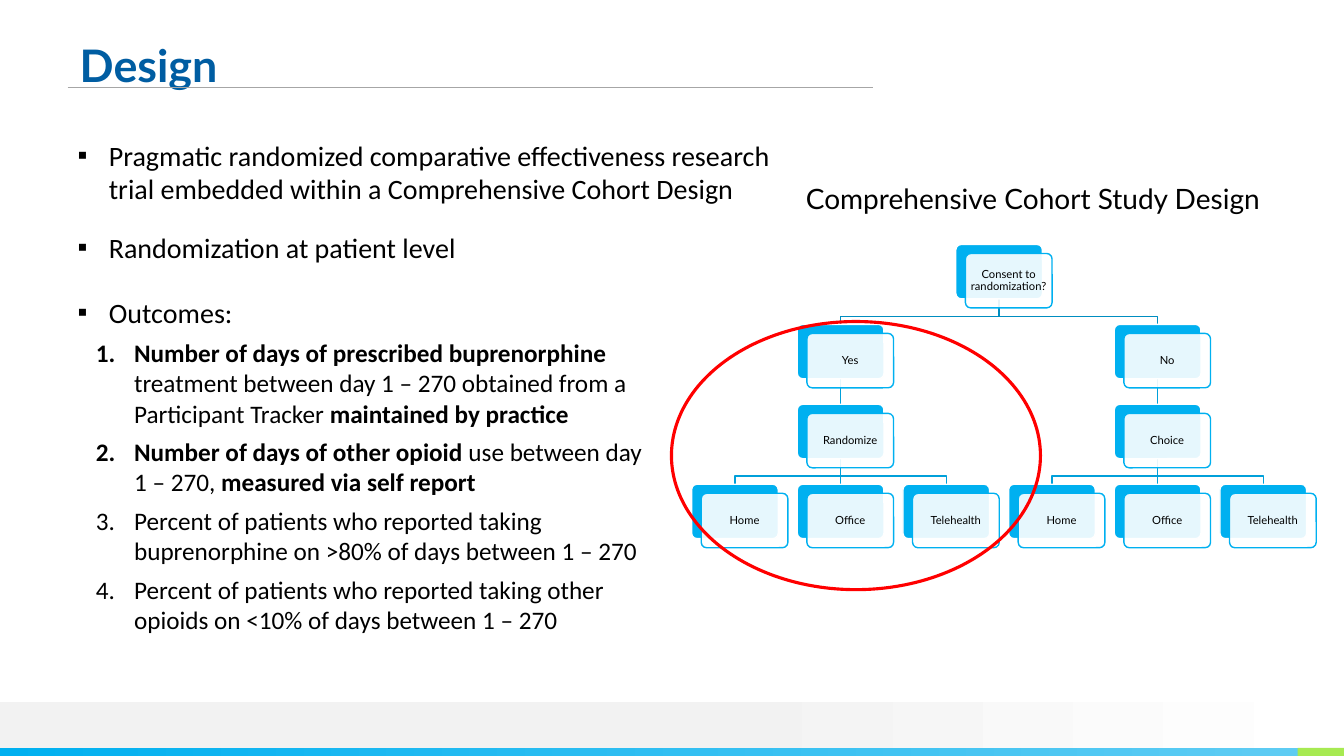
"""Builds the Design slide with its outcome list and cohort study tree."""
from dataclasses import dataclass

from lxml.etree import SubElement
from pptx import Presentation
from pptx.dml.color import RGBColor
from pptx.enum.shapes import MSO_CONNECTOR as Line, MSO_SHAPE as Shape
from pptx.enum.text import MSO_ANCHOR as Anchor, MSO_AUTO_SIZE as AutoSize, PP_ALIGN as Align
from pptx.oxml.ns import qn
from pptx.util import Inches, Pt


@dataclass(frozen=True)
class Theme:
    black: RGBColor = RGBColor.from_string("000000")
    white: RGBColor = RGBColor.from_string("FFFFFF")
    navy: RGBColor = RGBColor.from_string("005DA2")
    sky: RGBColor = RGBColor.from_string("00B0F0")
    pale_sky: RGBColor = RGBColor.from_string("5ECCF3")
    root_link: RGBColor = RGBColor.from_string("008DC0")
    link: RGBColor = RGBColor.from_string("00A0DA")
    red: RGBColor = RGBColor.from_string("FF0000")
    green: RGBColor = RGBColor.from_string("A7EA52")
    mist: RGBColor = RGBColor.from_string("F2F2F2")
    rule: RGBColor = RGBColor.from_string("A6A6A6")
    heading: Pt = Pt(32)
    large: Pt = Pt(20)
    outcome: Pt = Pt(18)
    node: Pt = Pt(8)


def write(para, spans, size, font, color=Theme.black, **layout):
    for name, value in layout.items():
        setattr(para, name, value)
    for words, bold in spans:
        if words == "\n":
            para.add_line_break()
            continue
        span = para.add_run()
        span.text = words
        for name, value in {"size": size, "name": font, "bold": bold}.items():
            setattr(span.font, name, value)
        span.font.color.rgb = color


def add_panel(kind, bounds, fill=None, line=None, width=1):
    panel = page.shapes.add_shape(kind, *map(Inches, bounds))
    panel.shadow.inherit = False
    if fill is None:
        panel.fill.background()
    else:
        panel.fill.solid()
        panel.fill.fore_color.rgb = fill
    if line is None:
        panel.line.fill.background()
    else:
        panel.line.color.rgb = line
        panel.line.width = Pt(width)
    return panel


deck = Presentation()
deck.slide_width, deck.slide_height = Inches(13.33), Inches(7.5)
page = deck.slides.add_slide(deck.slide_layouts[3])

bars = [
    ((0, 6.96, 13.33, 0.46), [(0.53, Theme.mist), (1, Theme.white)]),
    ((0, 7.42, 12.87, 0.08), [(0, Theme.sky), (1, Theme.pale_sky)]),
]
for bounds, stops in bars:
    bar = add_panel(Shape.RECTANGLE, bounds)
    bar.fill.gradient()
    bar.fill.gradient_angle = 0
    for stop, (position, color) in zip(bar.fill.gradient_stops, stops):
        stop.position = position
        stop.color.rgb = color
add_panel(Shape.RECTANGLE, (12.87, 7.42, 0.46, 0.08), Theme.green)

bullet = {"indent": 0.31, "hanging": 0.31, "mark": ("a:buChar", "char", "▪"), "size": Theme.large}
number = {"indent": 0.56, "hanging": 0.38, "mark": ("a:buAutoNum", "type", "arabicPeriod"),
          "size": Theme.outcome}
lists = [
    ((0.67, 1.32, 7.15, 1.36), [
        (bullet, 0, [("Pragmatic randomized comparative effectiveness research trial "
                      "embedded within a Comprehensive Cohort Design", False)]),
        (bullet, 18, [("Randomization at patient level", False)]),
    ]),
    ((0.67, 2.88, 6.11, 3.5), [
        (bullet, 0, [("Outcomes:", False)]),
        (number, 6, [("Number of days of prescribed buprenorphine", True),
                     (" treatment between day 1 – 270 obtained from a Participant Tracker ", False),
                     ("maintained by practice", True)]),
        (number, 6, [("Number of days of other opioid", True), (" use between day ", False),
                     ("\n", False), ("1 – 270, ", False), ("measured via self report", True)]),
        (number, 6, [("Percent of patients who reported taking buprenorphine on >80% of days "
                      "between 1 – 270", False)]),
        (number, 6, [("Percent of patients who reported taking other opioids on <10% of days "
                      "between 1 – 270", False)]),
    ]),
]
title, *bodies = page.placeholders
caption = page.shapes.add_textbox(0, 0, 0, 0)
boxes = [(title, (0.79, 0.43, 3.83, 0.47)), (caption, (7.82, 1.8, 4.85, 0.62))]
boxes += [(body, bounds) for body, (bounds, items) in zip(bodies, lists)]
for box, bounds in boxes:
    for name, value in zip(("left", "top", "width", "height"), bounds):
        setattr(box, name, Inches(value))
    frame_format = {"word_wrap": True, "auto_size": AutoSize.NONE, "vertical_anchor": Anchor.TOP}
    if box not in bodies:
        frame_format |= dict.fromkeys(
            ("margin_left", "margin_top", "margin_right", "margin_bottom"), 0)
    for name, value in frame_format.items():
        setattr(box.text_frame, name, value)

write(title.text_frame.paragraphs[0], [("Design", True)], Theme.heading, "Lato", Theme.navy,
      alignment=Align.LEFT, line_spacing=0.9)
write(caption.text_frame.paragraphs[0], [("Comprehensive Cohort Study Design", False)],
      Theme.large, "Lato", alignment=Align.CENTER)

for body, (bounds, items) in zip(bodies, lists):
    for index, (style, before, spans) in enumerate(items):
        para = body.text_frame.add_paragraph() if index else body.text_frame.paragraphs[0]
        properties = para._p.get_or_add_pPr()
        properties.set("marL", str(Inches(style["indent"])))
        properties.set("indent", str(-Inches(style["hanging"])))
        tag, attribute, value = style["mark"]
        SubElement(properties, qn(tag)).set(attribute, value)
        write(para, spans, style["size"], "Calibri", space_before=Pt(before))

tree_left, tree_top = 6.86, 2.425
column_step, row_step = 1.048, 0.793
node_width, node_height = 0.86, 0.54
nodes = [
    ("Consent to randomization?", 2.5, 0, None),
    ("Yes", 1, 1, 2.5), ("Randomize", 1, 2, 1),
    ("Home", 0, 3, 1), ("Office", 1, 3, 1), ("Telehealth", 2, 3, 1),
    ("No", 4, 1, 2.5), ("Choice", 4, 2, 4),
    ("Home", 3, 3, 4), ("Office", 4, 3, 4), ("Telehealth", 5, 3, 4),
]
for label, column, row, parent in nodes[1:]:
    start_x, end_x = (Inches(tree_left + place * column_step + node_width / 2)
                      for place in (parent, column))
    end_y = tree_top + row * row_step
    start_y, bend_y, end_y = map(Inches, (end_y - row_step + node_height, end_y - 0.08, end_y))
    if parent == column:
        link = page.shapes.add_connector(Line.STRAIGHT, start_x, start_y, end_x, end_y)
        SubElement(link._element.spPr, qn("a:effectLst"))
    else:
        outline = page.shapes.build_freeform(start_x, start_y)
        outline.add_line_segments([(start_x, bend_y), (end_x, bend_y), (end_x, end_y)], close=False)
        link = outline.convert_to_shape()
        link.shadow.inherit = False
        link.fill.background()
    link.line.color.rgb = Theme.root_link if row == 1 else Theme.link
    link.line.width = Pt(1)

for label, column, row, parent in nodes:
    left, top = tree_left + column * column_step, tree_top + row * row_step
    back = add_panel(Shape.ROUNDED_RECTANGLE, (left, top, node_width, node_height),
                     Theme.sky, Theme.white)
    front = add_panel(Shape.ROUNDED_RECTANGLE, (left + 0.095, top + 0.09, node_width, node_height),
                      Theme.white, Theme.sky)
    back.adjustments[0] = front.adjustments[0] = 0.1
    tint = front._element.spPr.find(qn("a:solidFill")).find(qn("a:srgbClr"))
    SubElement(tint, qn("a:alpha")).set("val", "90000")
    frame = front.text_frame
    frame.word_wrap, frame.vertical_anchor = True, Anchor.MIDDLE
    for side in ("left", "top", "right", "bottom"):
        setattr(frame, f"margin_{side}", Inches(0.03))
    write(frame.paragraphs[0], [(label, False)], Theme.node, "Lato",
          alignment=Align.CENTER, line_spacing=0.9)

add_panel(Shape.OVAL, (6.66, 3.19, 3.66, 2.66), line=Theme.red, width=2.25)
title_rule = page.shapes.add_connector(Line.STRAIGHT, *map(Inches, (0.67, 0.87, 8.66, 0.87)))
SubElement(title_rule._element.spPr, qn("a:effectLst"))
title_rule.line.color.rgb = Theme.rule
title_rule.line.width = Pt(0.5)

deck.save("out.pptx")
